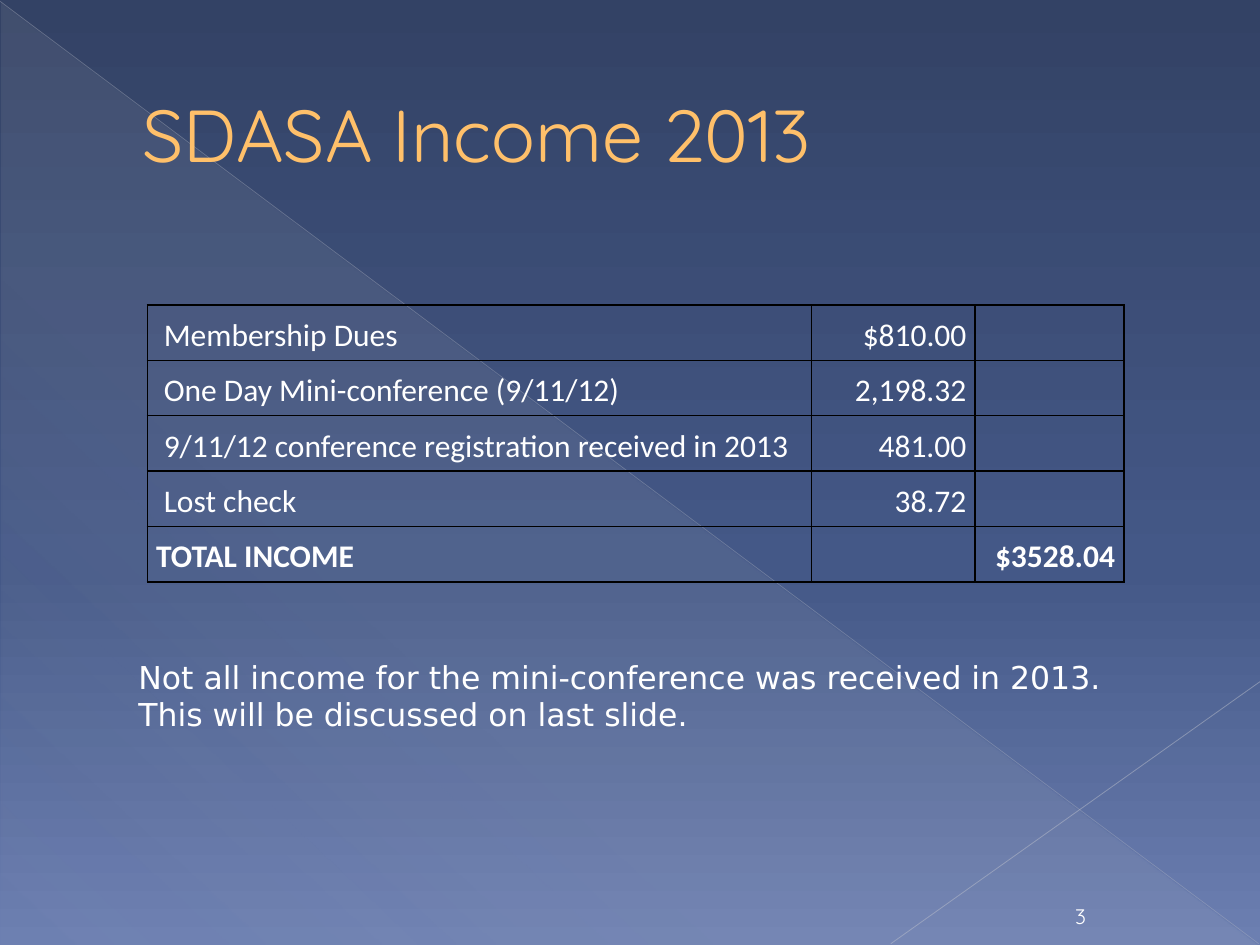
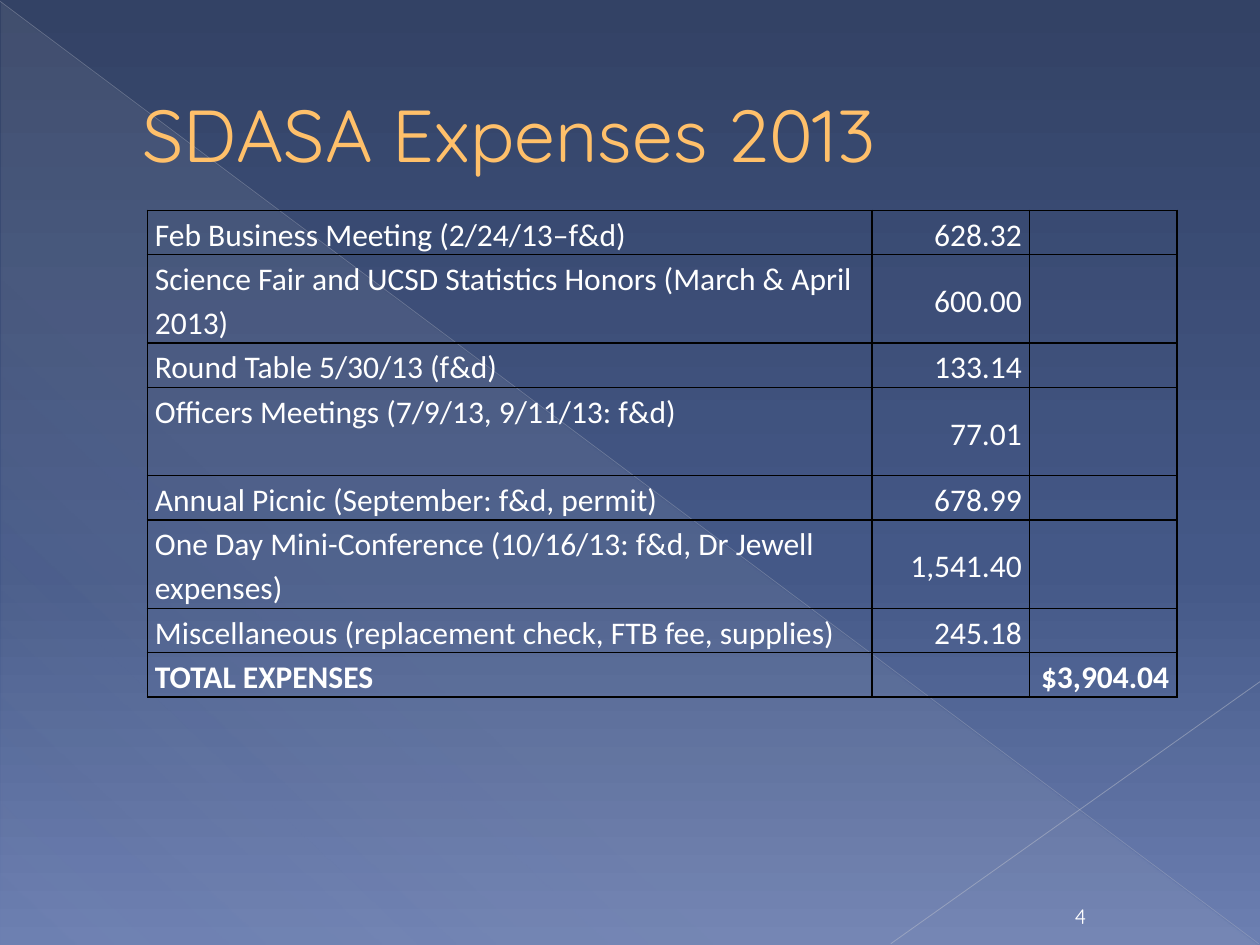
"""Build the income and expense slides of the SDASA 2013 treasurer report."""
from lxml import etree
from pptx import Presentation
from pptx.dml.color import RGBColor
from pptx.enum import shapes, text
from pptx.oxml import ns
from pptx.util import Inches, Pt

WHITE, ORANGE, BLACK = "FFFFFF", "FFC06A", "000000"
TITLE_FONT, TABLE_FONT, NOTE_FONT = "Quicksand", "Calibri", "DejaVu Sans"
BACKGROUND = [(0, "334265", 100), (60, "445887", 100), (100, "6C7FB1", 100)]
SHEEN = [(0, "D4D4D6", 10), (70, "D4D4D6", 8), (100, "D4D4D6", 1)]
RAYS = [
    ((0, 0.01), (9.99, 7.49), "B9BDC8", 0.39, 35),
    ((10, 5.41), (7.07, 7.49), "C1C4CE", 0.47, 45),
]
TABLE_LEFT = 1.17
FIRST_NUMBER = 3

REPORTS = [
    {
        "title": "SDASA Income 2013",
        "top": 2.42,
        "columns": [5.27, 1.3, 1.18],
        "line_height": 0.44,
        "margin": 0.07,
        "item_indent": 0.06,
        "label_anchor": text.MSO_ANCHOR.MIDDLE,
        "items": [
            ("Membership Dues", "$810.00", 1),
            ("One Day Mini-conference (9/11/12)", "2,198.32", 1),
            ("9/11/12 conference registration received in 2013", "481.00", 1),
            ("Lost check", "38.72", 1),
        ],
        "total": ("TOTAL INCOME", "$3528.04"),
        "note": [
            "Not all income for the mini-conference was received in 2013.",
            "This will be discussed on last slide.",
        ],
    },
    {
        "title": "SDASA Expenses 2013",
        "top": 1.67,
        "columns": [5.75, 1.25, 1.17],
        "line_height": 0.35,
        "margin": 0.06,
        "item_indent": 0,
        "label_anchor": text.MSO_ANCHOR.TOP,
        "items": [
            ("Feb Business Meeting (2/24/13–f&d)", "628.32", 1),
            ("Science Fair and UCSD Statistics Honors (March & April 2013)", "600.00", 2),
            ("Round Table 5/30/13 (f&d)", "133.14", 1),
            ("Officers Meetings (7/9/13, 9/11/13: f&d)", "77.01", 2),
            ("Annual Picnic (September: f&d, permit)", "678.99", 1),
            ("One Day Mini-Conference (10/16/13: f&d, Dr Jewell expenses)", "1,541.40", 2),
            ("Miscellaneous (replacement check, FTB fee, supplies)", "245.18", 1),
        ],
        "total": ("TOTAL EXPENSES", "$3,904.04"),
        "note": [],
    },
]


def color(value):
    """Return the colour for a hex string."""
    return RGBColor.from_string(value)


def child(parent, tag, **attributes):
    """Append a DrawingML element to a parent."""
    return etree.SubElement(parent, ns.qn(tag), attributes)


def set_opacity(fill_element, percent):
    """Make the colour inside a fill element translucent."""
    child(fill_element.find(".//" + ns.qn("a:srgbClr")), "a:alpha", val=str(percent * 1000))


def set_gradient(fill, stops, angle):
    """Give a fill a linear gradient with any number of stops."""
    fill.gradient()
    gradient = fill._fill._gradFill
    for part in list(gradient):
        gradient.remove(part)
    stop_list = child(gradient, "a:gsLst")
    for position, value, opacity in stops:
        stop = child(stop_list, "a:gs", pos=str(position * 1000))
        child(stop, "a:srgbClr", val=value)
        if opacity < 100:
            set_opacity(stop, opacity)
    child(gradient, "a:lin", ang=str(angle * 60000), scaled="0")


def style(para, font, size, value, bold=False, align=text.PP_ALIGN.LEFT):
    """Set the font and alignment of a paragraph."""
    para.font.name, para.font.size, para.font.bold = font, Pt(size), bold
    para.font.color.rgb = color(value)
    para.alignment = align


def add_backdrop(page):
    """Draw the translucent triangle and the two light rays."""
    triangle = page.shapes.add_shape(
        shapes.MSO_SHAPE.RIGHT_TRIANGLE, Inches(0.01), Inches(0.02), Inches(9.98), Inches(7.48))
    triangle.shadow.inherit = False
    triangle.line.fill.background()
    set_gradient(triangle.fill, SHEEN, 133)
    for start, end, value, width, opacity in RAYS:
        ray = page.shapes.add_connector(
            shapes.MSO_CONNECTOR.STRAIGHT, *(Inches(part) for part in start + end))
        ray.line.width = Pt(width)
        ray.line.color.rgb = color(value)
        set_opacity(ray.line._ln, opacity)
        child(ray._element.spPr, "a:effectLst")


def add_title(page, words):
    """Place the title above the backdrop."""
    title = page.shapes.title
    page.shapes._spTree.append(title._element)
    title.left, title.top = Inches(0.5), Inches(0.29)
    title.width, title.height = Inches(9), Inches(1.53)
    title.text_frame.text = words
    title.text_frame.vertical_anchor = text.MSO_ANCHOR.MIDDLE
    para = title.text_frame.paragraphs[0]
    style(para, TITLE_FONT, 42, ORANGE)
    para._p.get_or_add_pPr().set("marL", str(Inches(0.53)))


def add_text(page, frame, lines, font, size, align, anchor):
    """Add a text box with one paragraph for each line."""
    box = page.shapes.add_textbox(*(Inches(part) for part in frame))
    box.text_frame.word_wrap = True
    box.text_frame.vertical_anchor = anchor
    box.text_frame.text = "\n".join(lines)
    for para in box.text_frame.paragraphs:
        style(para, font, size, WHITE, align=align)


def add_borders(cell):
    """Draw a thin black line on every side of a cell."""
    properties = cell._tc.get_or_add_tcPr()
    for position, side in enumerate(("a:lnL", "a:lnR", "a:lnT", "a:lnB")):
        line = child(properties, side, w=str(Pt(1)))
        child(child(line, "a:solidFill"), "a:srgbClr", val=BLACK)
        properties.insert(position, line)


def add_ledger(page, report):
    """Add the table of items, amounts and total."""
    label, total = report["total"]
    rows = [(name, amount, "") for name, amount, _ in report["items"]] + [(label, "", total)]
    heights = [report["line_height"] * lines for _, _, lines in report["items"]]
    heights.append(report["line_height"])
    widths = report["columns"]
    table = page.shapes.add_table(
        len(rows), len(widths), Inches(TABLE_LEFT), Inches(report["top"]),
        Inches(sum(widths)), Inches(sum(heights))).table
    table.first_row = table.horz_banding = False
    for column, width in zip(table.columns, widths):
        column.width = Inches(width)
    for row, height, values in zip(table.rows, heights, rows):
        row.height = Inches(height)
        is_total = values[0] == label
        for index, (cell, value) in enumerate(zip(row.cells, values)):
            is_label = index == 0
            indent = report["item_indent"] if is_label and not is_total else 0
            cell.margin_left = Inches(report["margin"] + indent)
            cell.margin_right = Inches(report["margin"])
            cell.margin_top = cell.margin_bottom = 0
            cell.vertical_anchor = report["label_anchor"] if is_label else text.MSO_ANCHOR.MIDDLE
            cell.fill.background()
            add_borders(cell)
            cell.text = value
            para = cell.text_frame.paragraphs[0]
            align = text.PP_ALIGN.LEFT if is_label else text.PP_ALIGN.RIGHT
            style(para, TABLE_FONT, 18, WHITE, is_total, align)
            para.line_spacing = 1.15


def main():
    """Build and save the deck."""
    deck = Presentation()
    deck.slide_width, deck.slide_height = Inches(10), Inches(7.5)
    set_gradient(deck.slide_master.background.fill, BACKGROUND, 90)
    for number, report in enumerate(REPORTS, FIRST_NUMBER):
        page = deck.slides.add_slide(deck.slide_layouts[5])
        add_backdrop(page)
        add_title(page, report["title"])
        add_ledger(page, report)
        if report["note"]:
            add_text(page, (1, 5.17, 8.15, 0.71), report["note"], NOTE_FONT, 18,
                     text.PP_ALIGN.LEFT, text.MSO_ANCHOR.TOP)
        add_text(page, (8.3, 7.09, 0.55, 0.33), [str(number)], TITLE_FONT, 12,
                 text.PP_ALIGN.CENTER, text.MSO_ANCHOR.BOTTOM)
    deck.save("out.pptx")


if __name__ == "__main__":
    main()
